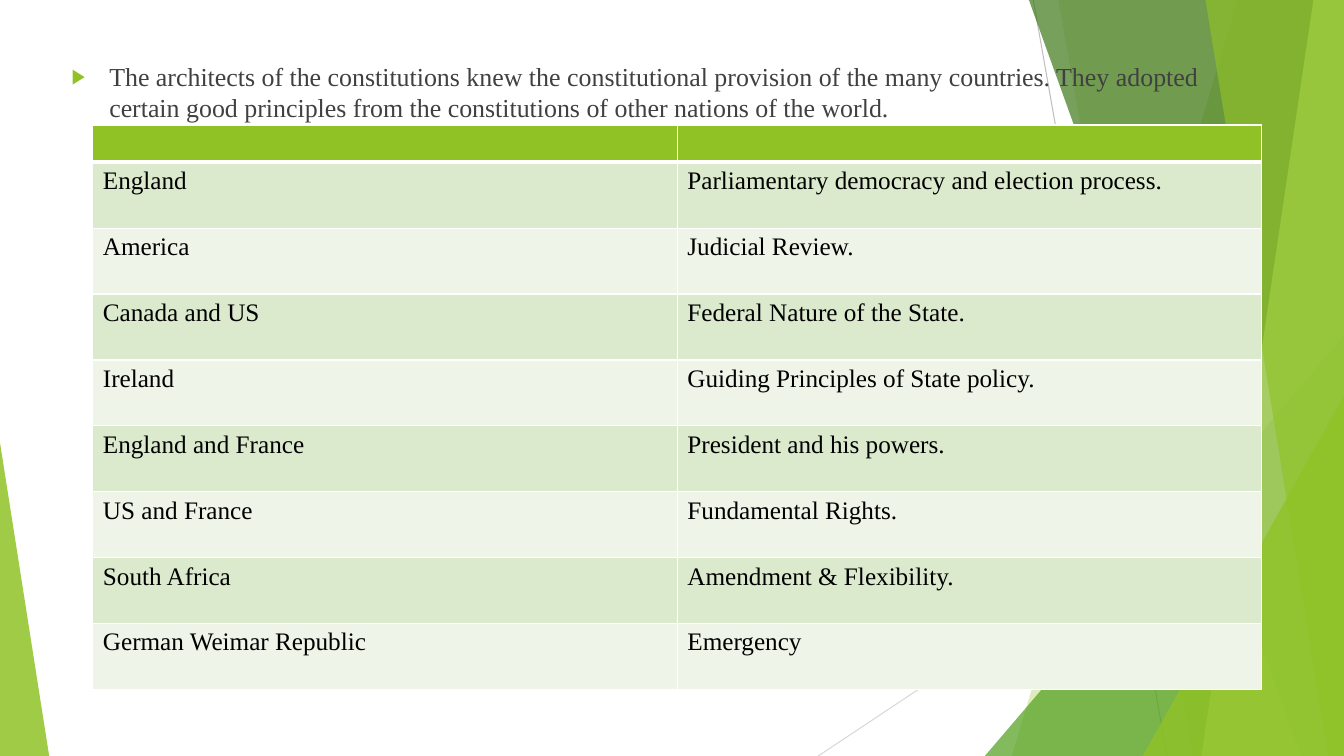
from dataclasses import dataclass

from lxml.etree import SubElement
from pptx import Presentation
from pptx.dml.color import RGBColor
from pptx.enum.shapes import MSO_CONNECTOR, MSO_SHAPE
from pptx.enum.text import MSO_AUTO_SIZE
from pptx.oxml.ns import qn
from pptx.util import Cm, Pt

INTRO = (
    "The architects of the constitutions knew the constitutional provision of the many "
    "countries. They adopted certain good principles from the constitutions of other "
    "nations of the world."
)
BORROWED = [
    ("England", "Parliamentary democracy and election process."),
    ("America", "Judicial Review."),
    ("Canada and US", "Federal Nature of the State."),
    ("Ireland", "Guiding Principles of State policy."),
    ("England and France", "President and his powers."),
    ("US and France", "Fundamental Rights."),
    ("South Africa", "Amendment & Flexibility."),
    ("German Weimar Republic", "Emergency"),
]


@dataclass(frozen=True)
class Theme:
    font: str = "Times New Roman"
    intro_size: float = 18.5
    table_size: float = 18
    accent: str = "90C226"
    leaf: str = "54A021"
    forest: str = "3F7819"
    lime: str = "C0E474"
    row_dark: str = "DBE9CD"
    row_light: str = "EEF4E8"
    border: str = "FFFFFF"
    intro_ink: str = "404040"
    table_ink: str = "000000"


THEME = Theme()
SLIDE_W, SLIDE_H = 33.87, 19.05
HAIRLINES = [
    ((26.04, 0), (29.41, SLIDE_H), "BFBFBF"),
    ((SLIDE_W, 10.24), (20.62, SLIDE_H), "D9D9D9"),
]
RIBBONS = [
    ("band", (31.19, 25.5), THEME.accent, 30),
    ("band", (26.67, 30.05), THEME.accent, 20),
    ("wedge", (24.82, 8.46, 9.05, 1), THEME.leaf, 72),
    ("band", (25.93, 32.79), THEME.forest, 70),
    ("band", (33.1, 30.28), THEME.lime, 70),
    ("band", (30.38, 33.48), THEME.accent, 65),
    ("wedge", (28.8, 9.98, 5.07, 1), THEME.accent, 80),
    ("wedge", (0, 11.15, 1.24, 0), THEME.accent, 85),
]
TABLE_LEFT, TABLE_TOP, COLUMN_W = 2.34, 3.15, 14.73
HEADER_H, ROW_H = 0.94, 1.66


def style_run(run, size, ink):
    run.font.name = THEME.font
    run.font.size = Pt(size)
    run.font.color.rgb = RGBColor.from_string(ink)


def draw_hairline(shapes, start, end, ink):
    hairline = shapes.add_connector(MSO_CONNECTOR.STRAIGHT, *map(Cm, start + end))
    hairline.line.color.rgb = RGBColor.from_string(ink)
    hairline.line.width = Pt(0.75)
    SubElement(hairline.element.spPr, qn("a:effectLst"))


def draw_ribbon(shapes, kind, geometry, ink, opacity):
    if kind == "band":
        top_x, bottom_x = geometry
        outline = shapes.build_freeform(Cm(top_x), 0)
        corners = [(SLIDE_W, 0), (SLIDE_W, SLIDE_H), (bottom_x, SLIDE_H)]
        outline.add_line_segments([(Cm(x), Cm(y)) for x, y in corners], close=True)
        ribbon = outline.convert_to_shape()
    else:
        left, top, width, tip = geometry
        ribbon = shapes.add_shape(
            MSO_SHAPE.ISOSCELES_TRIANGLE, Cm(left), Cm(top), Cm(width), Cm(SLIDE_H - top)
        )
        ribbon.adjustments[0] = tip
    ribbon.shadow.inherit = False
    ribbon.line.fill.background()
    ribbon.fill.solid()
    ribbon.fill.fore_color.rgb = RGBColor.from_string(ink)
    color = ribbon.element.spPr.find(qn("a:solidFill"))[0]
    SubElement(color, qn("a:alpha"), val=str(opacity * 1000))


def write_intro(intro):
    intro.left, intro.top, intro.width, intro.height = map(Cm, (1.55, 1.4, 29.21, 1.75))
    frame = intro.text_frame
    frame.text = INTRO
    frame.word_wrap = True
    frame.auto_size = MSO_AUTO_SIZE.NONE
    sentence = frame.paragraphs[0]
    sentence.space_before = Pt(10)
    style_run(sentence.runs[0], THEME.intro_size, THEME.intro_ink)
    props = sentence.runs[0].font and sentence._p.get_or_add_pPr()
    props.set("marL", str(Cm(0.95)))
    props.set("indent", str(-Cm(0.95)))
    SubElement(SubElement(props, qn("a:buClr")), qn("a:srgbClr"), val=THEME.accent)
    SubElement(props, qn("a:buSzPct"), val="80000")
    SubElement(props, qn("a:buChar"), char="▶")


def style_cell(cell, fill, top_width, bottom_width):
    props = cell._tc.get_or_add_tcPr()
    for side, width in (("L", 1), ("R", 1), ("T", top_width), ("B", bottom_width)):
        edge = SubElement(props, qn(f"a:ln{side}"), w=str(Pt(width)))
        SubElement(SubElement(edge, qn("a:solidFill")), qn("a:srgbClr"), val=THEME.border)
    cell.fill.solid()
    cell.fill.fore_color.rgb = RGBColor.from_string(fill)


def add_borrowed_table(shapes):
    rows = [("", "")] + BORROWED
    heights = [HEADER_H] + [ROW_H] * len(BORROWED)
    table = shapes.add_table(
        len(rows), 2, Cm(TABLE_LEFT), Cm(TABLE_TOP), Cm(2 * COLUMN_W), Cm(sum(heights))
    ).table
    for column in table.columns:
        column.width = Cm(COLUMN_W)
    for index, (entries, height) in enumerate(zip(rows, heights)):
        table.rows[index].height = Cm(height)
        stripe = THEME.row_dark if index % 2 else THEME.row_light
        for cell, entry in zip(table.rows[index].cells, entries):
            style_cell(
                cell,
                stripe if index else THEME.accent,
                3 if index == 1 else 1,
                1 if index else 3,
            )
            if entry:
                cell.text = entry
                style_run(cell.text_frame.paragraphs[0].runs[0], THEME.table_size, THEME.table_ink)
            else:
                cell.margin_top = cell.margin_bottom = 0


def main():
    """Build the slide on the borrowed features of the constitution."""
    deck = Presentation()
    deck.slide_width, deck.slide_height = Cm(SLIDE_W), Cm(SLIDE_H)
    slide = deck.slides.add_slide(deck.slide_layouts[1])
    shapes = slide.shapes
    shapes.element.remove(shapes.title.element)
    intro = slide.placeholders[1]
    for hairline in HAIRLINES:
        draw_hairline(shapes, *hairline)
    for ribbon in RIBBONS:
        draw_ribbon(shapes, *ribbon)
    shapes.element.append(intro.element)
    write_intro(intro)
    add_borrowed_table(shapes)
    deck.save("out.pptx")


if __name__ == "__main__":
    main()
